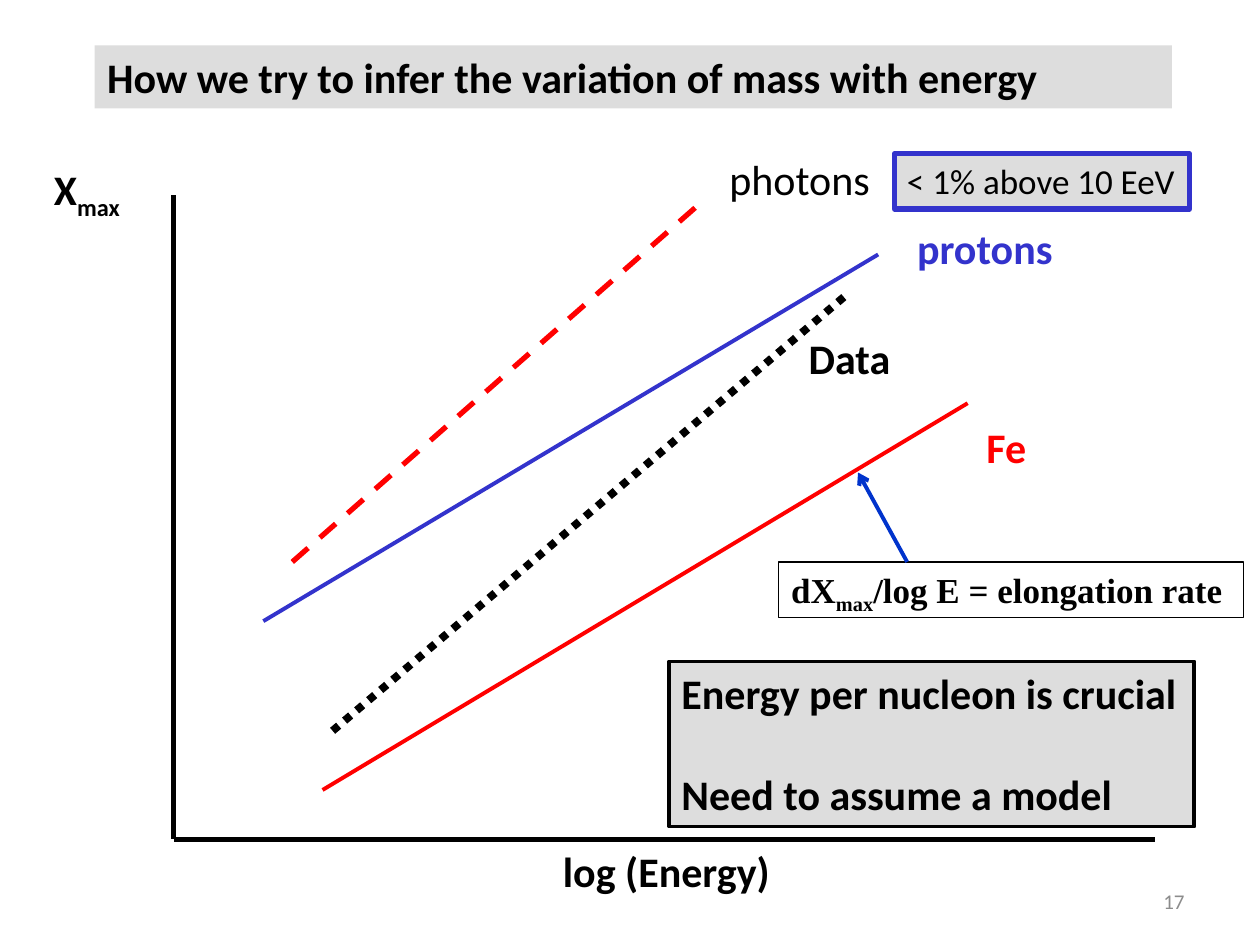
from lxml import etree
from pptx import Presentation
from pptx.dml.color import RGBColor
from pptx.enum.dml import MSO_LINE
from pptx.enum.shapes import MSO_CONNECTOR, MSO_SHAPE
from pptx.enum.text import MSO_ANCHOR, MSO_AUTO_SIZE, PP_ALIGN
from pptx.oxml.ns import qn
from pptx.util import Inches, Pt

BLACK = RGBColor(0x00, 0x00, 0x00)
WHITE = RGBColor(0xFF, 0xFF, 0xFF)
RED = RGBColor(0xFF, 0x00, 0x00)
PROTON_BLUE = RGBColor(0x33, 0x33, 0xCC)
ARROW_BLUE = RGBColor(0x00, 0x33, 0xCC)
PANEL_GREY = RGBColor(0xDD, 0xDD, 0xDD)
NUMBER_GREY = RGBColor(0x8C, 0x8C, 0x8C)


def add_runs(paragraph, runs, size=24, color=BLACK, bold=True, font="Calibri"):
    """Add (text, is_subscript) runs in one common format."""
    for text, is_subscript in runs:
        run = paragraph.add_run()
        run.text = text
        run.font.name = font
        run.font.size = Pt(size)
        run.font.bold = bold
        run.font.color.rgb = color
        if is_subscript:
            run.font._element.set("baseline", "-25000")


def add_label(slide, box, runs, **style):
    label = slide.shapes.add_textbox(*map(Inches, box))
    label.text_frame.word_wrap = False
    add_runs(label.text_frame.paragraphs[0], runs, **style)
    return label


def add_panel(slide, box, fill, line_color, line_width, wrap=True):
    panel = slide.shapes.add_shape(MSO_SHAPE.RECTANGLE, *map(Inches, box))
    panel.shadow.inherit = False
    if fill is None:
        panel.fill.background()
    else:
        panel.fill.solid()
        panel.fill.fore_color.rgb = fill
    panel.line.color.rgb = line_color
    panel.line.width = Pt(line_width)
    frame = panel.text_frame
    frame.word_wrap = wrap
    frame.vertical_anchor = MSO_ANCHOR.TOP
    frame.paragraphs[0].alignment = PP_ALIGN.LEFT
    return frame


def add_line(slide, start, end, color, width, dash=None, arrow=False):
    line = slide.shapes.add_connector(
        MSO_CONNECTOR.STRAIGHT, *map(Inches, (*start, *end)))
    line.line.color.rgb = color
    line.line.width = Pt(width)
    if dash is not None:
        line.line.dash_style = dash
    properties = line._element.spPr
    if arrow:
        outline = properties.find(qn("a:ln"))
        etree.SubElement(outline, qn("a:tailEnd")).set("type", "arrow")
    etree.SubElement(properties, qn("a:effectLst"))


def build_title(slide, box):
    title = slide.shapes.title
    title.left, title.top, title.width, title.height = map(Inches, box)
    title.fill.solid()
    title.fill.fore_color.rgb = PANEL_GREY
    frame = title.text_frame
    frame.auto_size = MSO_AUTO_SIZE.NONE
    frame.vertical_anchor = MSO_ANCHOR.TOP
    frame.paragraphs[0].alignment = PP_ALIGN.LEFT
    add_runs(frame.paragraphs[0],
             [("How we try to infer the variation of mass with energy", False)])


def build_plot(slide, box):
    left, top, width, height = box

    def at(x, y):
        return left + x, top + y

    # Axes meet at the lower left corner
    origin = at(0, height)
    add_line(slide, at(0, 0), origin, BLACK, 3)
    add_line(slide, origin, at(width, height), BLACK, 3)

    # Trends: start, end, colour, width, dash
    trends = [
        ((0.71, 3.38), (5.59, 0.47), PROTON_BLUE, 2.25, None),
        ((1.18, 4.72), (6.3, 1.65), RED, 2.25, None),
        ((1.26, 4.25), (5.35, 0.78), BLACK, 4.5, MSO_LINE.ROUND_DOT),
        ((0.94, 2.91), (4.17, 0.07), RED, 3, MSO_LINE.DASH),
    ]
    for start, end, color, line_width, dash in trends:
        add_line(slide, at(*start), at(*end), color, line_width, dash)

    # Trend and axis labels: text, x, y, width, colour, bold
    labels = [
        ("photons", 4.31, -0.38, 1.39, BLACK, False),
        ("protons", 5.8, 0.17, 1.44, PROTON_BLUE, True),
        ("Fe", 6.35, 1.75, 0.59, RED, True),
        ("Data", 4.94, 1.04, 0.93, BLACK, True),
        ("log (Energy)", 2.99, height, 2.14, BLACK, True),
    ]
    for text, x, y, label_width, color, bold in labels:
        add_label(slide, (*at(x, y), label_width, 0.5), [(text, False)],
                  color=color, bold=bold)
    add_label(slide, (*at(-1.05, -0.3), 0.87, 0.5),
              [("X", False), ("max", True)])


def build_conclusions(slide, box):
    frame = add_panel(slide, box, PANEL_GREY, BLACK, 2.25)
    add_runs(frame.paragraphs[0], [("Energy per nucleon is crucial", False)])
    model = frame.add_paragraph()
    model.alignment = PP_ALIGN.LEFT
    model.space_before = Pt(29)
    add_runs(model, [("Need to assume a model", False)])


def build_photon_limit(slide, box):
    frame = add_panel(slide, box, PANEL_GREY, PROTON_BLUE, 3, wrap=False)
    add_runs(frame.paragraphs[0], [("< 1% above 10 EeV", False)],
             size=20, bold=False)


def build_elongation_rate(slide, box):
    left, top, _, _ = box
    frame = add_panel(slide, box, None, BLACK, 0.75)
    add_runs(frame.paragraphs[0],
             [("dX", False), ("max", True), ("/log E = elongation rate", False)],
             size=20, font="Times New Roman")
    # Pointer up to the iron line
    add_line(slide, (left + 1.02, top), (left + 0.63, top - 0.71),
             ARROW_BLUE, 2.25, arrow=True)


def build_slide_number(slide, box):
    number = add_label(slide, box, [("17", False)],
                       size=12, color=NUMBER_GREY, bold=False)
    number.text_frame.word_wrap = True
    number.text_frame.vertical_anchor = MSO_ANCHOR.MIDDLE
    number.text_frame.paragraphs[0].alignment = PP_ALIGN.RIGHT


def main():
    presentation = Presentation()
    presentation.slide_width = Inches(10)
    presentation.slide_height = Inches(7.5)
    slide = presentation.slides.add_slide(presentation.slide_layouts[5])
    slide.background.fill.solid()
    slide.background.fill.fore_color.rgb = WHITE

    build_slide_number(slide, (7.17, 6.95, 2.33, 0.4))
    build_plot(slide, (1.38, 1.55, 7.79, 5.11))
    build_title(slide, (0.75, 0.36, 8.55, 0.5))
    build_conclusions(slide, (5.31, 5.25, 4.17, 1.31))
    build_photon_limit(slide, (7.1, 1.22, 2.34, 0.44))
    build_elongation_rate(slide, (6.18, 4.46, 3.69, 0.44))
    presentation.save("out.pptx")


if __name__ == "__main__":
    main()
